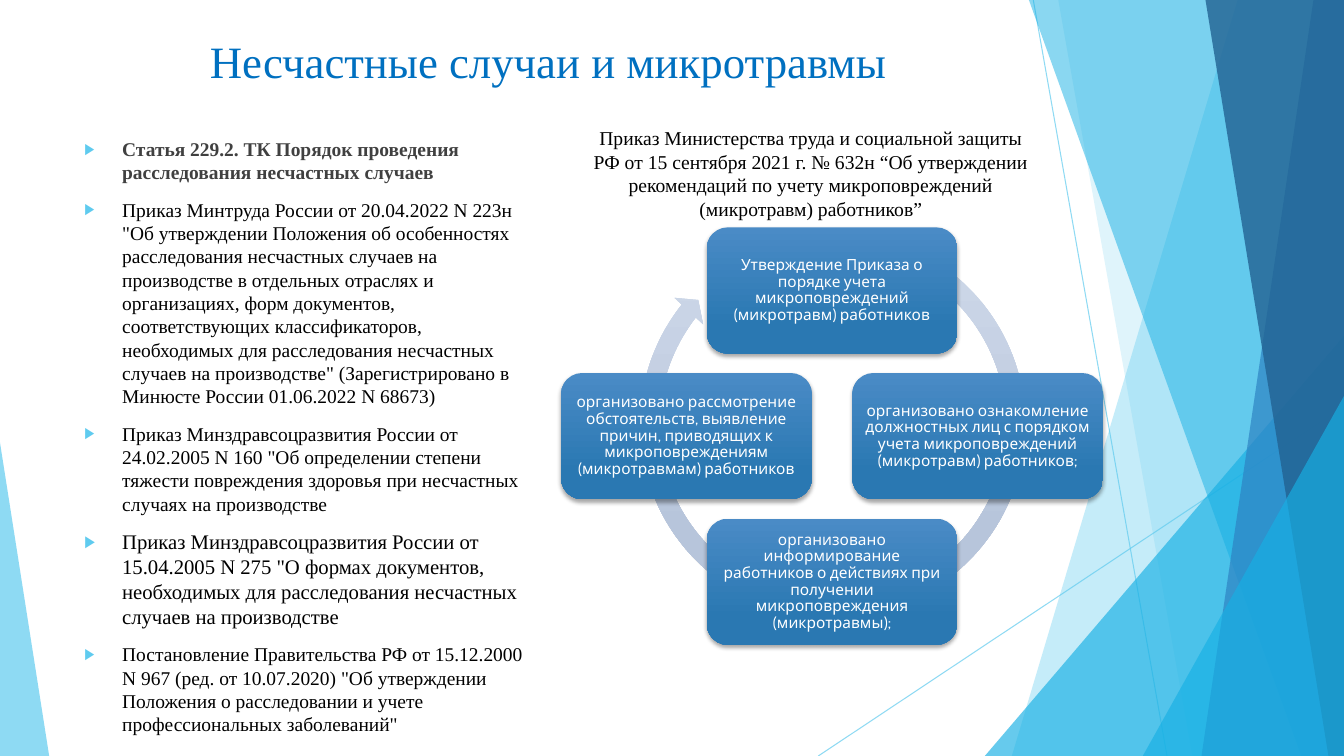
from dataclasses import dataclass
from math import cos, pi, sin

from pptx import Presentation
from pptx.dml.color import RGBColor
from pptx.enum.shapes import MSO_CONNECTOR, MSO_SHAPE
from pptx.enum.text import MSO_ANCHOR, MSO_AUTO_SIZE, PP_ALIGN
from pptx.oxml.ns import qn
from pptx.util import Cm, Pt
from lxml import etree

STRAIGHT = MSO_CONNECTOR.STRAIGHT
TRIANGLE = MSO_SHAPE.ISOSCELES_TRIANGLE
ROUNDED = MSO_SHAPE.ROUNDED_RECTANGLE
CYCLE_ARROW = MSO_SHAPE.CIRCULAR_ARROW
LEFT, CENTER = PP_ALIGN.LEFT, PP_ALIGN.CENTER
TOP, MIDDLE = MSO_ANCHOR.TOP, MSO_ANCHOR.MIDDLE
NO_AUTOFIT = MSO_AUTO_SIZE.NONE
TITLE_ONLY = 5
WIDTH, HEIGHT = 33.87, 19.05


@dataclass(frozen=True)
class Theme:
    serif: str = "Times New Roman"
    sans: str = "Cabin"
    title: str = "0070C0"
    text: str = "000000"
    heading: str = "404040"
    white: str = "FFFFFF"
    sky: str = "5FCBEF"
    cyan: str = "17B0E4"
    blue: str = "2E83C3"
    navy: str = "226292"
    step: tuple = ("4A8BC6", "2A78B2")
    ring: tuple = ("D0DAEA", "B7C5DB")
    title_size: float = 32
    caption_size: float = 14
    list_size: float = 13.9
    list_large: float = 14.8
    step_size: float = 11


def add_xml(parent, tag, **attributes):
    values = {key: str(value) for key, value in attributes.items()}
    return etree.SubElement(parent, qn(tag), values)


def set_opacity(shape, percent):
    color = next(shape._element.spPr.iter(qn("a:srgbClr")))
    add_xml(color, "a:alpha", val=percent * 1000)


def write(paragraph, text, size, color, font, bold=False, align=LEFT, spacing=1.0, before=0):
    paragraph.alignment = align
    paragraph.line_spacing = spacing
    paragraph.space_before = Pt(before)
    run = paragraph.add_run()
    run.text = text
    run.font.size = Pt(size)
    run.font.name = font
    run.font.bold = bold
    run.font.color.rgb = RGBColor.from_string(color)


class SlideBuilder:
    def __init__(self, slide, theme):
        self.slide, self.shapes, self.theme = slide, slide.shapes, theme

    def ray(self, start, end):
        """Thin translucent line of the backdrop."""
        line = self.shapes.add_connector(STRAIGHT, *map(Cm, start + end))
        line.line.color.rgb = RGBColor.from_string(self.theme.sky)
        line.line.width = Pt(0.75)
        set_opacity(line, 70)
        add_xml(line._element.spPr, "a:effectLst")

    def tint(self, shape, color, opacity):
        shape.shadow.inherit = False
        shape.fill.solid()
        shape.fill.fore_color.rgb = RGBColor.from_string(color)
        shape.line.fill.background()
        set_opacity(shape, opacity)

    def facet(self, top_x, bottom_x, color, opacity):
        """Backdrop panel between a slanted edge and the right side of the slide."""
        outline = self.shapes.build_freeform(Cm(top_x), 0)
        corners = [(WIDTH, 0), (WIDTH, HEIGHT), (bottom_x, HEIGHT)]
        outline.add_line_segments([(Cm(x), Cm(y)) for x, y in corners])
        self.tint(outline.convert_to_shape(), color, opacity)

    def corner(self, left, top, width, apex, color, opacity):
        """Backdrop triangle standing on the bottom edge of the slide."""
        triangle = self.shapes.add_shape(TRIANGLE, *map(Cm, (left, top, width, HEIGHT - top)))
        triangle.adjustments[0] = apex
        self.tint(triangle, color, opacity)

    def gradient_shape(self, kind, box, colors):
        shape = self.shapes.add_shape(kind, *map(Cm, box))
        shape.shadow.inherit = False
        shape.line.fill.background()
        shape.fill.gradient()
        shape.fill.gradient_angle = 270
        for stop, color, position in zip(shape.fill.gradient_stops, colors, (0, 0.78)):
            stop.color.rgb = RGBColor.from_string(color)
            stop.position = position
        return shape

    def cycle_arrow(self, box):
        arrow = self.gradient_shape(CYCLE_ARROW, box, self.theme.ring)
        for index, value in enumerate((0.047, 2.729, 130.94, 178.545, 0.048)):
            arrow.adjustments[index] = value

    def step(self, box, text):
        card = self.gradient_shape(ROUNDED, box, self.theme.step)
        effects = card._element.spPr.find(qn("a:effectLst"))
        shadow = add_xml(effects, "a:outerShdw", blurRad=Pt(3), dist=Pt(2),
                         dir=5400000, rotWithShape=0)
        add_xml(add_xml(shadow, "a:srgbClr", val="000000"), "a:alpha", val=35000)
        frame = card.text_frame
        frame.word_wrap = True
        frame.vertical_anchor = MIDDLE
        frame.margin_left = frame.margin_right = Cm(0.13)
        frame.margin_top = frame.margin_bottom = Cm(0.13)
        write(frame.paragraphs[0], text, self.theme.step_size, self.theme.white,
              self.theme.sans, align=CENTER, spacing=0.9)

    def title(self, box, text):
        heading = self.shapes.title
        heading.left, heading.top, heading.width, heading.height = map(Cm, box)
        heading.text_frame.vertical_anchor = TOP
        heading.text_frame.auto_size = NO_AUTOFIT
        write(heading.text_frame.paragraphs[0], text, self.theme.title_size,
              self.theme.title, self.theme.serif, align=CENTER)

    def text_box(self, box):
        frame = self.shapes.add_textbox(*map(Cm, box)).text_frame
        frame.word_wrap = True
        return frame

    def caption(self, box, text):
        write(self.text_box(box).paragraphs[0], text, self.theme.caption_size,
              self.theme.text, self.theme.serif, align=CENTER)

    def bullet_list(self, box, entries):
        frame = self.text_box(box)
        for index, (text, style) in enumerate(entries):
            paragraph = frame.add_paragraph() if index else frame.paragraphs[0]
            look = {"size": self.theme.list_size, "color": self.theme.text, **style}
            write(paragraph, text, font=self.theme.serif, before=10, **look)
            properties = paragraph._p.get_or_add_pPr()
            properties.set("marL", str(Cm(0.95)))
            properties.set("indent", str(-Cm(0.95)))
            add_xml(add_xml(properties, "a:buClr"), "a:srgbClr", val=self.theme.sky)
            add_xml(properties, "a:buSzPct", val=80000)
            add_xml(properties, "a:buFont", typeface="Arial")
            add_xml(properties, "a:buChar", char="▶")


def draw_backdrop(page):
    theme = page.theme
    page.ray((26.04, 0), (29.41, HEIGHT))
    page.ray((WIDTH, 10.24), (20.62, HEIGHT))
    page.facet(31.19, 25.5, theme.sky, 36)
    page.facet(26.67, 30.05, theme.sky, 20)
    page.corner(24.82, 8.46, 9.05, 1, theme.cyan, 66)
    page.facet(25.93, 32.79, theme.cyan, 50)
    page.facet(33.1, 30.28, theme.blue, 70)
    page.facet(30.38, 33.48, theme.navy, 80)
    page.corner(28.8, 9.98, 5.07, 1, theme.cyan, 66)
    page.corner(0, 11.15, 1.24, 0, theme.sky, 70)


def draw_cycle(page, steps):
    """Place the steps clockwise from the top around the arrow."""
    center_x, center_y, radius = 20.97, 10.99, 3.67
    width, height = 6.32, 3.18
    page.cycle_arrow((15.88, 5.59, 10.21, 10.21))
    for index, text in enumerate(steps):
        angle = 2 * pi * index / len(steps) - pi / 2
        left = center_x + radius * cos(angle) - width / 2
        top = center_y + radius * sin(angle) - height / 2
        page.step((left, top, width, height), text)


def main():
    theme = Theme()
    deck = Presentation()
    deck.slide_width, deck.slide_height = Cm(WIDTH), Cm(HEIGHT)
    page = SlideBuilder(deck.slides.add_slide(deck.slide_layouts[TITLE_ONLY]), theme)
    draw_backdrop(page)
    page.title((1.88, 0.71, 23.88, 3.66), "Несчастные случаи и микротравмы")
    page.bullet_list((1.88, 3.33, 11.63, 13.13), [
        ("Статья 229.2. ТК Порядок проведения расследования несчастных случаев",
         {"color": theme.heading, "bold": True}),
        ("Приказ Минтруда России от 20.04.2022 N 223н \"Об утверждении Положения об "
         "особенностях расследования несчастных случаев на производстве в отдельных отраслях "
         "и организациях, форм документов, соответствующих классификаторов, необходимых для "
         "расследования несчастных случаев на производстве\" (Зарегистрировано в Минюсте "
         "России 01.06.2022 N 68673)", {}),
        ("Приказ Минздравсоцразвития России от 24.02.2005 N 160 \"Об определении степени "
         "тяжести повреждения здоровья при несчастных случаях на производстве", {}),
        ("Приказ Минздравсоцразвития России от 15.04.2005 N 275 \"О формах документов, "
         "необходимых для расследования несчастных случаев на производстве",
         {"size": theme.list_large}),
        ("Постановление Правительства РФ от 15.12.2000 N 967 (ред. от 10.07.2020) \"Об "
         "утверждении Положения о расследовании и учете профессиональных заболеваний\"", {}),
    ])
    draw_cycle(page, [
        "Утверждение Приказа о порядке учета микроповреждений (микротравм) работников",
        "организовано ознакомление должностных лиц с порядком учета микроповреждений "
        "(микротравм) работников;",
        "организовано информирование работников о действиях при получении "
        "микроповреждения (микротравмы);",
        "организовано рассмотрение обстоятельств, выявление причин, приводящих к "
        "микроповреждениям (микротравмам) работников",
    ])
    page.caption((14.48, 3.05, 11.91, 2.64),
                 "Приказ Министерства труда и социальной защиты РФ от 15 сентября 2021 г. "
                 "№ 632н “Об утверждении рекомендаций по учету микроповреждений "
                 "(микротравм) работников”")
    deck.save("out.pptx")


if __name__ == "__main__":
    main()
